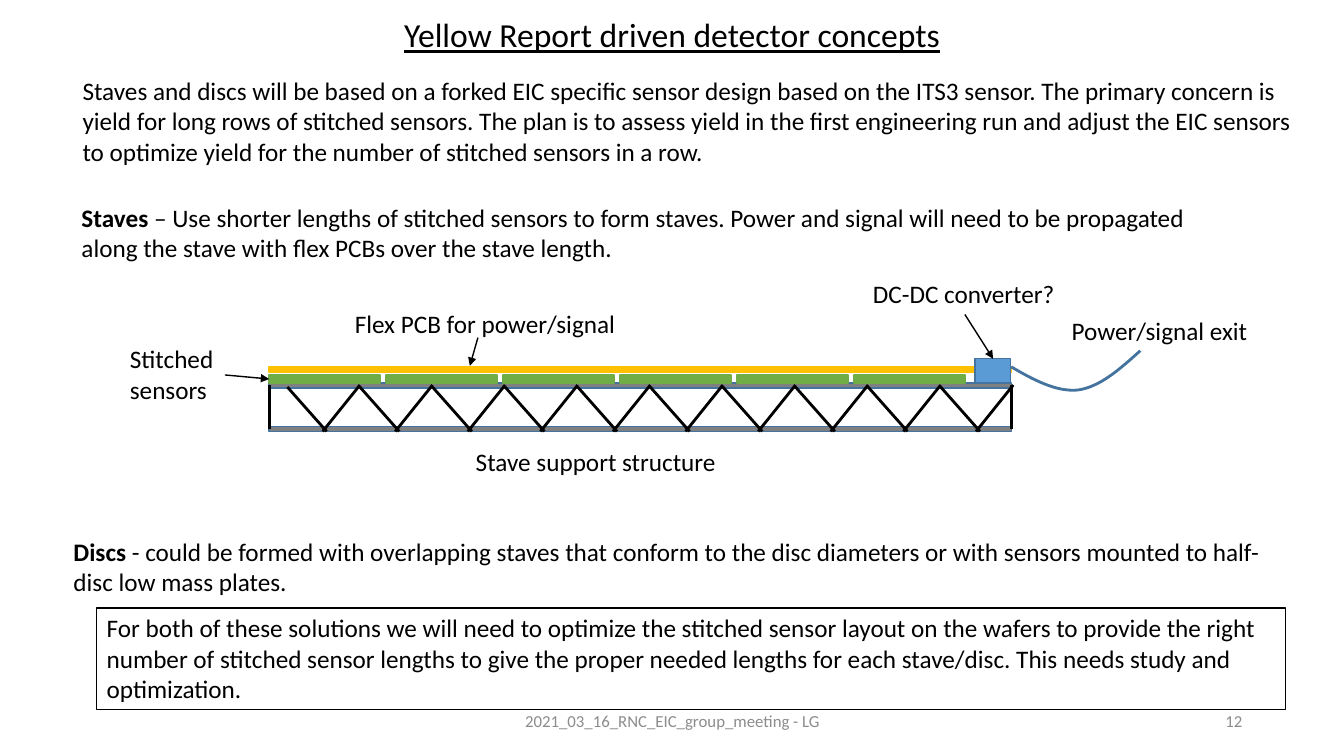
from lxml.etree import SubElement
from pptx import Presentation
from pptx.dml.color import RGBColor
from pptx.enum.shapes import MSO_CONNECTOR, MSO_SHAPE
from pptx.enum.text import MSO_ANCHOR, MSO_AUTO_SIZE, PP_ALIGN
from pptx.oxml.ns import qn
from pptx.util import Inches, Pt

BLACK = RGBColor(0, 0, 0)
GRAY = RGBColor(0x80, 0x80, 0x80)
PALE = RGBColor(0x8C, 0x8C, 0x8C)
GREEN = RGBColor(0x70, 0xAD, 0x47)
GOLD = RGBColor(0xFF, 0xC0, 0x00)
BLUE = RGBColor(0x5B, 0x9B, 0xD5)
NAVY = RGBColor(0x43, 0x73, 0x9E)


class Board:
    """Holds the text style and the current slide."""

    font = "Calibri"
    size = 18

    def __init__(self, slide):
        self.slide = slide
        self.shapes = slide.shapes

    def style(self, frame, size=None, color=BLACK, align=PP_ALIGN.LEFT):
        for para in frame.paragraphs:
            para.alignment = align
            for run in para.runs:
                run.font.name = self.font
                run.font.size = Pt(size or self.size)
                run.font.color.rgb = color

    def title(self, text, box):
        shape = self.shapes.title
        shape.left, shape.top, shape.width, shape.height = map(Inches, box)
        frame = shape.text_frame
        frame.text = text
        frame.auto_size = MSO_AUTO_SIZE.NONE
        frame.word_wrap = False
        frame.vertical_anchor = MSO_ANCHOR.TOP
        self.style(frame, 24, align=PP_ALIGN.CENTER)
        frame.paragraphs[0].runs[0].font.underline = True

    def text(self, text, box, lead="", wrap=True):
        frame = self.shapes.add_textbox(*map(Inches, box)).text_frame
        frame.word_wrap = wrap
        frame.text = lead or text
        if lead:
            para = frame.paragraphs[0]
            para.runs[0].font.bold = True
            para.add_run().text = text
        self.style(frame)
        return frame

    def label(self, text, box):
        self.text(text, box, wrap=False)

    def foot(self, text, box, align):
        frame = self.text(text, box)
        frame.vertical_anchor = MSO_ANCHOR.MIDDLE
        self.style(frame, 12, PALE, align)

    def rect(self, box, fill, edge):
        shape = self.shapes.add_shape(MSO_SHAPE.RECTANGLE, *map(Inches, box))
        shape.shadow.inherit = False
        if fill is None:
            shape.fill.background()
        else:
            shape.fill.solid()
            shape.fill.fore_color.rgb = fill
        shape.line.color.rgb = edge
        shape.line.width = Pt(1)
        return shape

    def note(self, text, box):
        frame = self.rect(box, None, BLACK).text_frame
        frame.word_wrap = True
        frame.vertical_anchor = MSO_ANCHOR.TOP
        frame.text = text
        self.style(frame)

    def line(self, start, end, width=2):
        link = self.shapes.add_connector(
            MSO_CONNECTOR.STRAIGHT, *map(Inches, start + end))
        link.line.color.rgb = BLACK
        link.line.width = Pt(width)
        SubElement(link._element.spPr, qn("a:effectLst"))
        return link

    def arrow(self, start, end):
        link = self.line(start, end, 1)
        tail = SubElement(link.line._get_or_add_ln(), qn("a:tailEnd"))
        tail.set("type", "triangle")

    def curve(self, parts, steps=16):
        """Draws joined cubic curves, each given by four points."""
        dots = []
        for part in parts:
            for step in range(steps + 1):
                t = step / steps
                mix = ((1 - t) ** 3, 3 * t * (1 - t) ** 2,
                       3 * t * t * (1 - t), t ** 3)
                dots.append(tuple(
                    Inches(sum(m * p[axis] for m, p in zip(mix, part)))
                    for axis in (0, 1)))
        form = self.shapes.build_freeform(*dots[0])
        form.add_line_segments(dots[1:], close=False)
        shape = form.convert_to_shape()
        shape.shadow.inherit = False
        shape.fill.background()
        shape.line.color.rgb = NAVY
        shape.line.width = Pt(2)


def main():
    deck = Presentation()
    deck.slide_width, deck.slide_height = Inches(13.33), Inches(7.5)
    board = Board(deck.slides.add_slide(deck.slide_layouts[5]))

    # Title and opening text
    board.title("Yellow Report driven detector concepts", (3.88, 0.09, 5.57, 0.5))
    board.text(
        "Staves and discs will be based on a forked EIC specific sensor design "
        "based on the ITS3 sensor. The primary concern is yield for long rows of "
        "stitched sensors. The plan is to assess yield in the first engineering "
        "run and adjust the EIC sensors to optimize yield for the number of "
        "stitched sensors in a row.", (0.72, 0.7, 12.28, 1.01))
    board.text(
        " – Use shorter lengths of stitched sensors to form staves. Power and "
        "signal will need to be propagated along the stave with flex PCBs over "
        "the stave length.", (0.71, 1.96, 11.7, 0.71), lead="Staves")

    # Support truss
    left, wide = 2.67, 7.36
    for top in (3.8, 4.23):
        board.rect((left, top, wide, 0.05), GRAY, NAVY)
    for x in (left, left + wide):
        board.line((x, 3.82), (x, 4.26))
    pitch = 0.72
    for i in range(10):
        x = 2.85 + i * pitch
        board.line((x + pitch, 3.82), (x + 0.35, 4.28))
        board.line((x, 3.84), (x + 0.39, 4.28))

    # Sensors, flex PCB, converter and cable
    for i in range(6):
        board.rect((left + i * 1.16, 3.72, 1.1, 0.08), GREEN, GREEN)
    board.rect((left, 3.64, wide, 0.05), GOLD, GOLD)
    board.curve([
        ((10.03, 3.64), (10.25, 3.77), (10.48, 3.89), (10.69, 3.87)),
        ((10.69, 3.87), (10.91, 3.84), (11.11, 3.66), (11.31, 3.48))])
    board.rect((9.67, 3.56, 0.35, 0.24), BLUE, NAVY)

    # Labels and arrows
    board.label("Flex PCB for power/signal", (3.42, 3.01, 2.81, 0.4))
    board.label("Stitched\nsensors", (1.19, 3.36, 1.04, 0.71))
    board.label("Stave support structure", (4.62, 4.38, 2.61, 0.4))
    board.label("Power/signal exit", (10.53, 3.08, 1.96, 0.4))
    board.label("DC-DC converter?", (8.56, 2.71, 2.02, 0.4))
    board.arrow((9.57, 3.12), (9.85, 3.56))
    board.arrow((4.74, 3.35), (4.66, 3.63))
    board.arrow((2.23, 3.72), (2.67, 3.76))

    # Discs and closing note
    board.text(
        " - could be formed with overlapping staves that conform to the disc "
        "diameters or with sensors mounted to half-disc low mass plates.",
        (0.63, 5.27, 12.35, 1.01), lead="Discs")
    board.note(
        "For both of these solutions we will need to optimize the stitched sensor "
        "layout on the wafers to provide the right number of stitched sensor "
        "lengths to give the proper needed lengths for each stave/disc. This needs "
        "study and optimization.", (0.96, 6.03, 11.79, 1.01))

    # Footer
    board.foot("2021_03_16_RNC_EIC_group_meeting - LG",
               (4.42, 6.95, 4.5, 0.4), PP_ALIGN.CENTER)
    board.foot("12", (9.42, 6.95, 3, 0.4), PP_ALIGN.RIGHT)

    deck.save("out.pptx")


if __name__ == "__main__":
    main()
